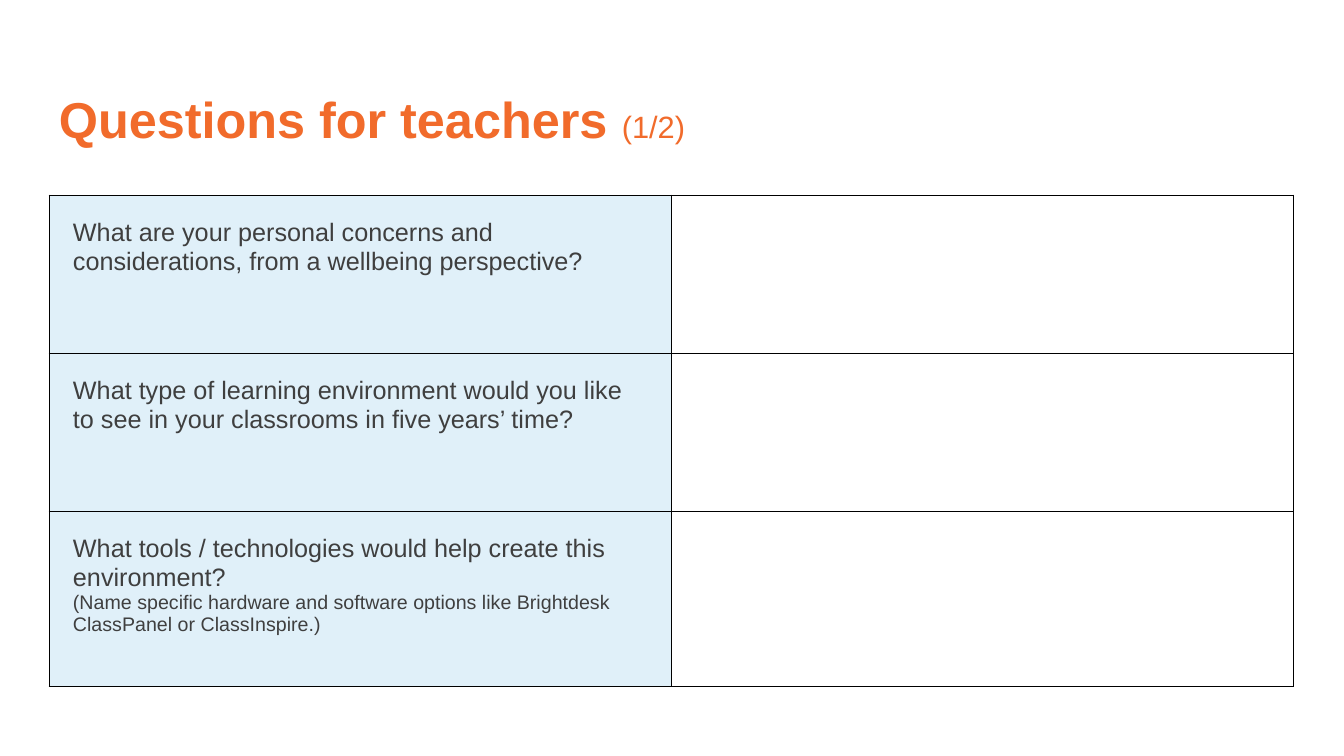
from lxml import etree
from pptx import Presentation
from pptx.dml.color import RGBColor
from pptx.enum.text import MSO_ANCHOR
from pptx.oxml.ns import qn
from pptx.util import Emu, Pt

MIDDLE = MSO_ANCHOR.MIDDLE
ORANGE = RGBColor(0xF1, 0x6B, 0x2B)
GREY = RGBColor(0x3F, 0x3F, 0x3F)
PALE_BLUE = RGBColor(0xE0, 0xF0, 0xF9)
WHITE = RGBColor(0xFF, 0xFF, 0xFF)
BLACK = RGBColor(0x00, 0x00, 0x00)

FONT = "Arial"
EMU_PER_PX = 914400 / 100.8
BORDER_WIDTH = Pt(0.75)
LEFT = 49
COLUMN_WIDTH = 622
ROW_HEIGHTS = [158, 158, 176]
CELL_MARGIN = 24

QUESTIONS = [
    ("What are your personal concerns and considerations, from a wellbeing perspective?", None),
    ("What type of learning environment would you like to see in your classrooms in five years’ time?", None),
    ("What tools / technologies would help create this environment?",
     "(Name specific hardware and software options like Brightdesk ClassPanel or ClassInspire.)"),
]


def px(length):
    return Emu(round(length * EMU_PER_PX))


def add_text(paragraph, text, size, color, bold=False):
    run = paragraph.add_run()
    run.text = text
    run.font.name = FONT
    run.font.size = Pt(size)
    run.font.bold = bold
    run.font.color.rgb = color


prs = Presentation()
prs.slide_width, prs.slide_height = px(1344), px(756)
slide = prs.slides.add_slide(prs.slide_layouts[6])

# Title
title = slide.shapes.add_textbox(px(LEFT), px(49), px(1159), px(146)).text_frame
title.word_wrap = True
title.vertical_anchor = MIDDLE
heading = title.paragraphs[0]
heading.line_spacing = 0.9
add_text(heading, "Questions for teachers ", size=36, color=ORANGE, bold=True)
add_text(heading, "(1/2)", size=22, color=ORANGE)

# Questions on the left, room for answers on the right
table = slide.shapes.add_table(
    len(QUESTIONS), 2, px(LEFT), px(195), px(2 * COLUMN_WIDTH), px(sum(ROW_HEIGHTS))
).table
table.first_row = False
table.horz_banding = False
for column in table.columns:
    column.width = px(COLUMN_WIDTH)

for row, height, (question, hint) in zip(table.rows, ROW_HEIGHTS, QUESTIONS):
    row.height = px(height)
    question_cell, answer_cell = row.cells

    for cell, fill in ((question_cell, PALE_BLUE), (answer_cell, WHITE)):
        cell_properties = cell._tc.get_or_add_tcPr()
        for side in ("a:lnL", "a:lnR", "a:lnT", "a:lnB"):
            border = etree.SubElement(cell_properties, qn(side), w=str(BORDER_WIDTH))
            border_fill = etree.SubElement(border, qn("a:solidFill"))
            etree.SubElement(border_fill, qn("a:srgbClr"), val=str(BLACK))
        cell.fill.solid()
        cell.fill.fore_color.rgb = fill

    question_cell.margin_left = question_cell.margin_right = px(CELL_MARGIN)
    question_cell.margin_top = question_cell.margin_bottom = px(CELL_MARGIN)
    paragraph = question_cell.text_frame.paragraphs[0]
    add_text(paragraph, question, size=18, color=GREY)
    if hint:
        paragraph.add_line_break()
        add_text(paragraph, hint, size=14, color=GREY)

prs.save("out.pptx")
